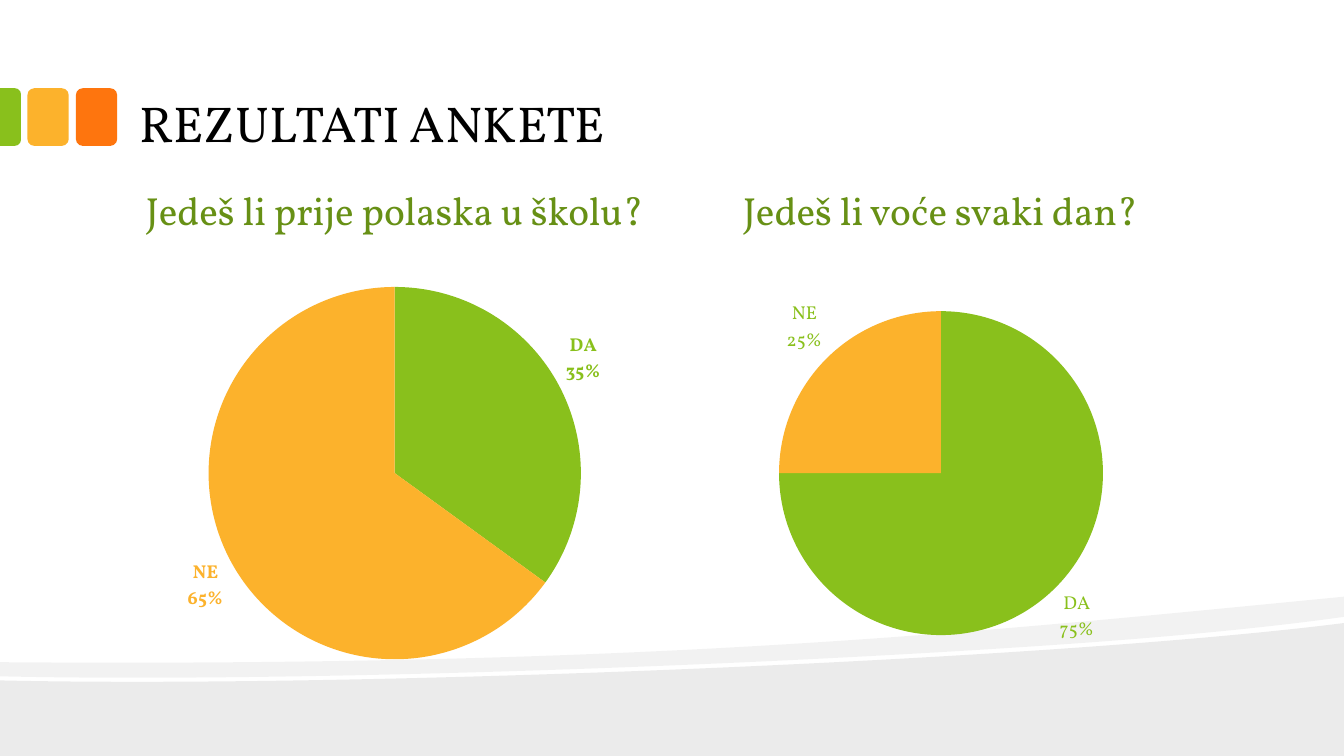
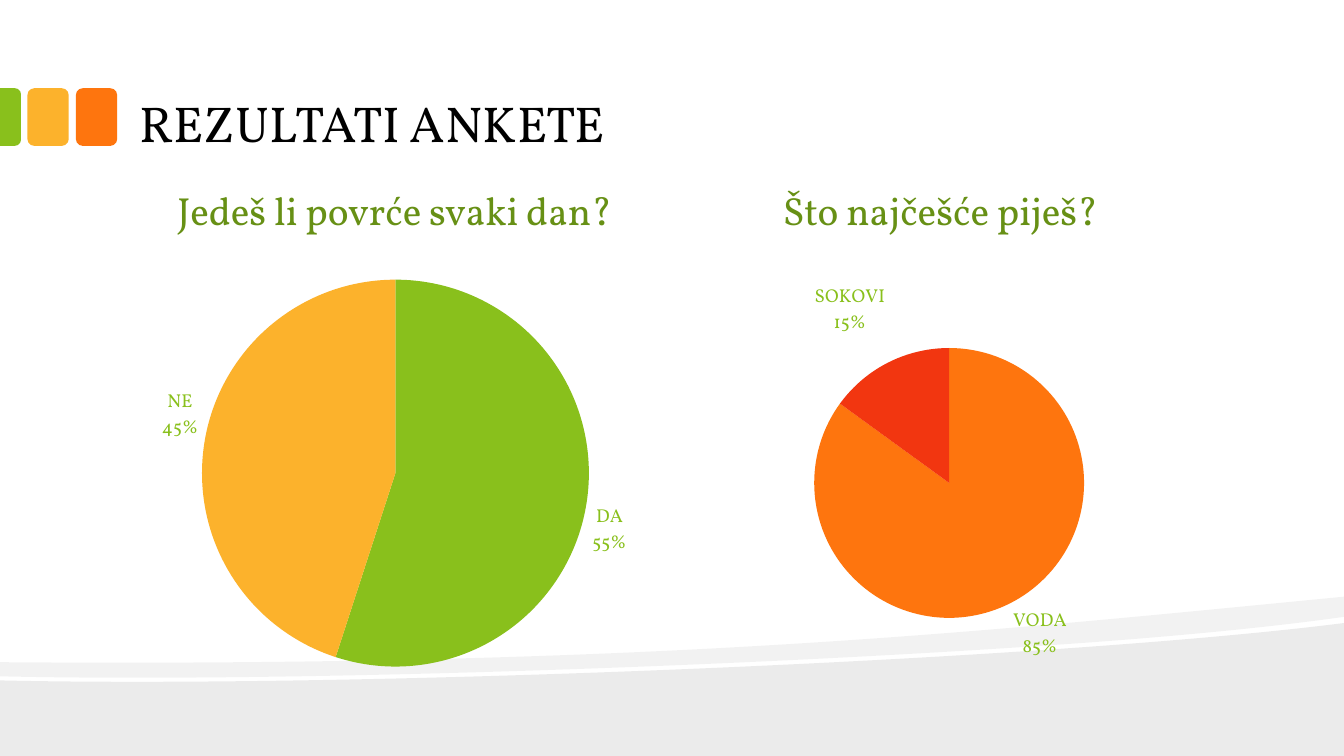
from lxml import etree
from pptx import Presentation
from pptx.chart import data as chart_data
from pptx.dml import color
from pptx.enum import chart as chart_enum, shapes, text
from pptx.oxml import ns, parse_xml
from pptx.util import Pt

FONT = "Vollkorn"
COLORS = {
    "title": "000000", "question": "679015", "shade": "000000",
    "green": "89C01C", "yellow": "FCB22C", "orange": "FE750E", "red": "F23610",
}
SLICES = ("green", "yellow", "orange", "red")
COLUMNS = (90, 479.8)
COLUMN_W = 384
FLOOR = [[(960, 540)], [(0, 540)], [(0, 486)],
         [(253.4, 491.8), (750.2, 471.6), (960, 445)]]
RIBBON = [[(960, 426.2)], [(960, 440.6)],
          [(903.6, 448.6), (827.3, 455.8), (740.9, 461.5)],
          [(502.6, 477.4), (185.8, 487.4), (0, 483.1)],
          [(0, 473)],
          [(469.4, 476.6), (699.1, 451.4), (960, 426.2)]]

YES_NO = ("DA", "NE")
SLIDES = [
    [dict(question="Jedeš li prije polaska u školu?", cats=YES_NO, values=(35, 65),
          inks=SLICES, bold=True, radius=133),
     dict(question="Jedeš li voće svaki dan?", cats=YES_NO, values=(75, 25),
          radius=115.7, shift=(0.4, 0))],
    [dict(question="Jedeš li povrće svaki dan?", cats=YES_NO, values=(55, 45),
          radius=138.2, shift=(0.5, 0)),
     dict(question="Što najčešće piješ?", cats=("", "", "VODA", "SOKOVI"),
          values=(None, None, 85, 15), radius=96.4, shift=(6.2, 7),
          lifts={3: -0.05})],
]


def rgb(name):
    """Return the named colour."""
    return color.RGBColor.from_string(COLORS[name])


def paint(sp, name, alpha=None):
    """Give a shape a flat fill, optionally transparent, with no line or shadow."""
    sp.shadow.inherit = False
    sp.fill.solid()
    sp.fill.fore_color.rgb = rgb(name)
    sp.line.fill.background()
    if alpha is not None:
        clr = sp._element.spPr.find(".//" + ns.qn("a:srgbClr"))
        etree.SubElement(clr, ns.qn("a:alpha"), val=str(alpha * 1000))


def add_wave(slide, segments, alpha):
    """Draw a closed outline whose three-point segments are cubic curves."""
    points = [(Pt(x), Pt(y)) for seg in segments for x, y in seg]
    builder = slide.shapes.build_freeform(*points[0])
    builder.add_line_segments(points[1:], close=True)
    sp = builder.convert_to_shape()
    lines = iter(sp._element.findall(".//" + ns.qn("a:lnTo")))
    for seg in segments[1:]:
        nodes = [next(lines) for _ in seg]
        if len(seg) == 3:
            curve = etree.Element(ns.qn("a:cubicBezTo"))
            nodes[0].addprevious(curve)
            for node in nodes:
                curve.append(node[0])
                node.getparent().remove(node)
    paint(sp, "shade", alpha)


def add_tiles(slide, y=63, w=29.5, h=41.2, pitch=34.6):
    """Draw the three coloured tiles at the left edge."""
    edge_w = 15
    for i, name in enumerate(("yellow", "orange")):
        paint(slide.shapes.add_shape(shapes.MSO_SHAPE.ROUNDED_RECTANGLE,
                                     Pt(19.6 + i * pitch), Pt(y), Pt(w), Pt(h)), name)
    sp = slide.shapes.add_shape(shapes.MSO_SHAPE.ROUND_2_SAME_RECTANGLE,
                                Pt((edge_w - h) / 2), Pt(y + (h - edge_w) / 2),
                                Pt(h), Pt(edge_w))
    sp.rotation = 90
    sp.adjustments[0] = 0.29
    paint(sp, "green")


def add_text(slide, box, words, size, name, anchor):
    """Add a one-paragraph text box and return its paragraph."""
    tf = slide.shapes.add_textbox(*map(Pt, box)).text_frame
    tf.word_wrap = True
    tf.vertical_anchor = anchor
    tf.margin_left = tf.margin_right = Pt(9.4)
    tf.margin_top = tf.margin_bottom = Pt(5)
    p = tf.paragraphs[0]
    r = p.add_run()
    r.text = words
    r.font.size = Pt(size)
    r.font.name = FONT
    r.font.color.rgb = rgb(name)
    return p


def layout_xml(**parts):
    """Build a manual chart layout from its ordered parts."""
    body = "".join(f'<c:{k} val="{v}"/>' for k, v in parts.items())
    return parse_xml(f'<c:layout {ns.nsdecls("c")}><c:manualLayout>{body}'
                     '</c:manualLayout></c:layout>')


def place_pie(chart, w, h, radius, shift):
    """Fix the pie's radius and its shift from the centre of the chart."""
    area = chart._chartSpace.find(".//" + ns.qn("c:plotArea"))
    for old in area.findall(ns.qn("c:layout")):
        area.remove(old)
    dx, dy = shift
    area.insert(0, layout_xml(
        layoutTarget="inner", xMode="edge", yMode="edge",
        x=round((w / 2 + dx - radius) / w, 4), y=round((h / 2 + dy - radius) / h, 4),
        w=round(2 * radius / w, 4), h=round(2 * radius / h, 4)))


def style_label(point, series, index, ink, bold, lift):
    """Show category above percentage outside one slice."""
    label = point.data_label
    font = label.font
    font.size = Pt(13.3)
    font.name = FONT
    font.bold = bold
    font.color.rgb = rgb(ink)
    label.position = chart_enum.XL_LABEL_POSITION.OUTSIDE_END
    node = series._element.xpath(f"c:dLbls/c:dLbl[c:idx/@val={index}]")[0]
    for tag, val in (("showVal", "0"), ("showCatName", "1"), ("showPercent", "1")):
        node.find(ns.qn("c:" + tag)).set("val", val)
    etree.SubElement(node, ns.qn("c:separator")).text = "\n"
    if lift:
        node.insert(1, layout_xml(x=0, y=lift))


def add_pie(slide, box, cats, values, radius, inks=("green",) * 4,
            bold=False, shift=(0, 0), lifts=None):
    """Add a pie chart with coloured slices and labels."""
    cd = chart_data.CategoryChartData()
    cd.categories = cats
    cd.add_series("Series 1", values)
    chart = slide.shapes.add_chart(chart_enum.XL_CHART_TYPE.PIE, *map(Pt, box), cd).chart
    chart.has_legend = False
    chart.has_title = False
    chart.font.name = FONT
    chart.font.size = Pt(10)
    place_pie(chart, *box[2:], radius, shift)
    series = chart.plots[0].series[0]
    for i, value in enumerate(values):
        point = series.points[i]
        point.format.fill.solid()
        point.format.fill.fore_color.rgb = rgb(SLICES[i])
        point.format.line.fill.background()
        if value is not None:
            style_label(point, series, i, inks[i], bold, (lifts or {}).get(i))
    for tag in ("showVal", "showLeaderLines"):
        for node in series._element.xpath(f"c:dLbls/c:{tag}"):
            node.set("val", "0")


def add_column(slide, x, question, **pie):
    """Place a question with its pie chart below."""
    p = add_text(slide, (x, 120, COLUMN_W, 64), question, 28, "question",
                 text.MSO_ANCHOR.MIDDLE)
    p.alignment = text.PP_ALIGN.CENTER
    p.line_spacing = 0.9
    p.space_before = Pt(18)
    add_pie(slide, (x, 190, COLUMN_W, 296), **pie)


def add_survey_slide(prs, columns):
    """Add a slide with the shared frame and two survey results."""
    slide = prs.slides.add_slide(prs.slide_layouts[6])
    add_wave(slide, FLOOR, 8)
    add_wave(slide, RIBBON, 5)
    add_tiles(slide)
    add_text(slide, (90, 12, 768, 102), "REZULTATI ANKETE", 36, "title",
             text.MSO_ANCHOR.BOTTOM)
    for x, column in zip(COLUMNS, columns):
        add_column(slide, x, **column)


def main():
    """Build and save the presentation."""
    prs = Presentation()
    prs.slide_width, prs.slide_height = Pt(960), Pt(540)
    for columns in SLIDES:
        add_survey_slide(prs, columns)
    prs.save("out.pptx")


if __name__ == "__main__":
    main()
